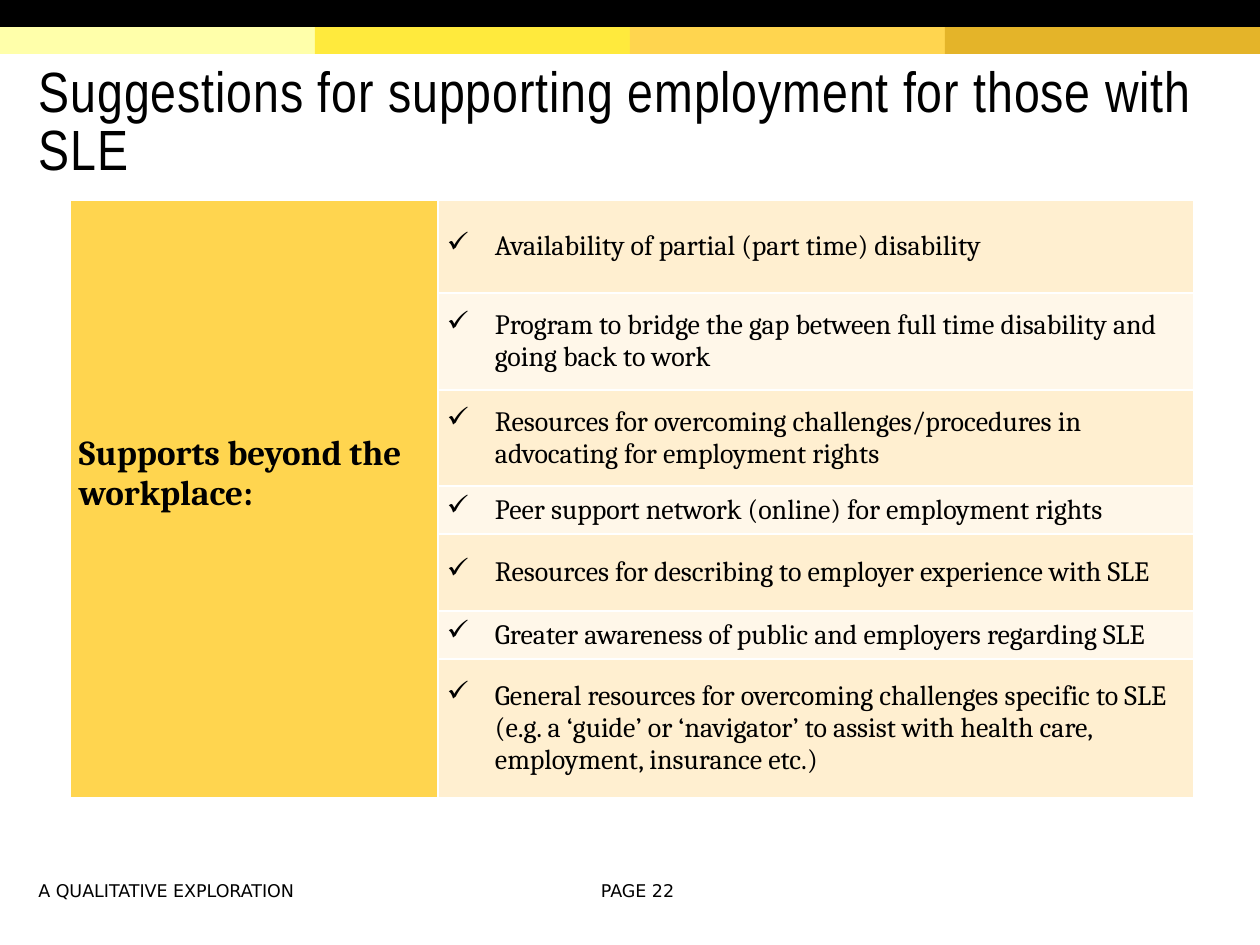
"""Build the slide on supports beyond the workplace for those with SLE."""
from typing import NamedTuple

from lxml import etree
from pptx import Presentation
from pptx.dml.color import RGBColor
from pptx.enum.shapes import MSO_SHAPE
from pptx.enum.text import MSO_ANCHOR, MSO_AUTO_SIZE, PP_ALIGN
from pptx.oxml.ns import qn
from pptx.util import Emu, Pt

RECT = MSO_SHAPE.RECTANGLE
MIDDLE = MSO_ANCHOR.MIDDLE
LEFT, CENTER = PP_ALIGN.LEFT, PP_ALIGN.CENTER
NO_FIT = MSO_AUTO_SIZE.NONE
SCALE = 914400 / 126
BLACK, WHITE, GOLD = "000000", "FFFFFF", "FFD54F"
TINTS = ("FFEFD0", "FFF7E9")
SIDES = ("a:lnL", "a:lnR", "a:lnT", "a:lnB")


class Band(NamedTuple):
    """A coloured bar at the top."""
    x: int
    y: int
    w: int
    color: str


class Note(NamedTuple):
    """A footer text."""
    x: int
    w: int
    text: str
    align: PP_ALIGN


class Item(NamedTuple):
    """A table row with its height."""
    h: int
    text: str


BANDS = [
    Band(i * 315, 27, 315, color)
    for i, color in enumerate(("FFFFAA", "FFEA3D", GOLD, "E4B429"))
] + [Band(0, 0, 1260, BLACK)]

ITEMS = [
    Item(93, "Availability of partial (part time) disability"),
    Item(97, "Program to bridge the gap between full time disability and "
             "going back to work"),
    Item(96, "Resources for overcoming challenges/procedures in advocating "
             "for employment rights"),
    Item(48, "Peer support network (online) for employment rights"),
    Item(77, "Resources for describing to employer experience with SLE"),
    Item(48, "Greater awareness of public and employers regarding SLE"),
    Item(139, "General resources for overcoming challenges specific to SLE "
              "(e.g. a ‘guide’ or ‘navigator’ to assist with health care, "
              "employment, insurance etc.)"),
]

NOTES = [
    Note(26, 541, "A QUALITATIVE EXPLORATION", LEFT),
    Note(577, 121, "PAGE 22", CENTER),
]


def px(n: int) -> Emu:
    """Turn px into EMU."""
    return Emu(round(n * SCALE))


def rgb(code: str) -> RGBColor:
    """Turn a hex string into a colour."""
    return RGBColor.from_string(code)


def style(para, name: str, size: float, bold: bool = False) -> None:
    """Set the font of a paragraph."""
    font = para.font
    font.name, font.size, font.bold = name, Pt(size), bold
    font.color.rgb = rgb(BLACK)


def draw_band(slide, band: Band) -> None:
    """Draw one bar."""
    bar = slide.shapes.add_shape(
        RECT, px(band.x), px(band.y), px(band.w), px(27))
    bar.shadow.inherit = False
    bar.fill.solid()
    bar.fill.fore_color.rgb = rgb(band.color)
    bar.line.fill.background()


def draw_title(slide, text: str) -> None:
    """Place and format the title."""
    title = slide.shapes.title
    title.left, title.top = px(26), px(59)
    title.width, title.height = px(1196), px(124)
    frame = title.text_frame
    frame.text = text
    frame.word_wrap, frame.auto_size = True, NO_FIT
    frame.vertical_anchor = MIDDLE
    frame.margin_left = frame.margin_right = frame.margin_top = px(13)
    frame.margin_bottom = px(6)
    para = frame.paragraphs[0]
    para.alignment, para.line_spacing = LEFT, 0.85
    style(para, "Arial Narrow", 32.4)
    para._p.pPr.find(qn("a:defRPr")).set("spc", "50")


def draw_note(slide, note: Note) -> None:
    """Draw one footer text."""
    box = slide.shapes.add_textbox(px(note.x), px(873), px(note.w), px(34))
    frame = box.text_frame
    frame.text = note.text
    frame.word_wrap, frame.vertical_anchor = True, MIDDLE
    para = frame.paragraphs[0]
    para.alignment = note.align
    style(para, "DejaVu Sans", 10)


def paint(cell, color: str) -> None:
    """Set the borders, fill and margins of a cell."""
    props = cell._tc.get_or_add_tcPr()
    for side in SIDES:
        line = etree.SubElement(props, qn(side), w=str(Pt(1)))
        fill = etree.SubElement(line, qn("a:solidFill"))
        etree.SubElement(fill, qn("a:srgbClr"), val=WHITE)
    cell.fill.solid()
    cell.fill.fore_color.rgb = rgb(color)
    cell.vertical_anchor = MIDDLE
    cell.margin_left = cell.margin_right = px(9)
    cell.margin_top = cell.margin_bottom = 0


def add_tick(para) -> None:
    """Give a paragraph a tick bullet."""
    props = para._p.get_or_add_pPr()
    props.set("marL", str(px(48)))
    props.set("indent", str(-px(48)))
    etree.SubElement(props, qn("a:buChar"), char="✓")


def draw_table(slide, head: str, items: list[Item]) -> None:
    """Draw the table of supports."""
    high = sum(item.h for item in items)
    frame = slide.shapes.add_table(
        len(items), 2, px(70), px(200), px(1124), px(high))
    table = frame.table
    table.first_row = table.horz_banding = False
    for col, wide in zip(table.columns, (368, 756)):
        col.width = px(wide)
    for i, item in enumerate(items):
        table.rows[i].height = px(item.h)
        paint(table.cell(i, 0), GOLD)
        cell = table.cell(i, 1)
        paint(cell, TINTS[i % 2])
        cell.text = item.text
        para = cell.text_frame.paragraphs[0]
        add_tick(para)
        style(para, "Cambria", 16)
    first = table.cell(0, 0)
    first.merge(table.cell(len(items) - 1, 0))
    first.text = head
    first.margin_bottom = px(50)
    style(first.text_frame.paragraphs[0], "Cambria", 20, True)


def main() -> None:
    """Build and save the slide."""
    deck = Presentation()
    deck.slide_width, deck.slide_height = px(1260), px(945)
    slide = deck.slides.add_slide(deck.slide_layouts[5])
    for band in BANDS:
        draw_band(slide, band)
    draw_title(slide, "Suggestions for supporting employment for those with SLE")
    draw_table(slide, "Supports beyond the workplace:", ITEMS)
    for note in NOTES:
        draw_note(slide, note)
    deck.save("out.pptx")


if __name__ == "__main__":
    main()
